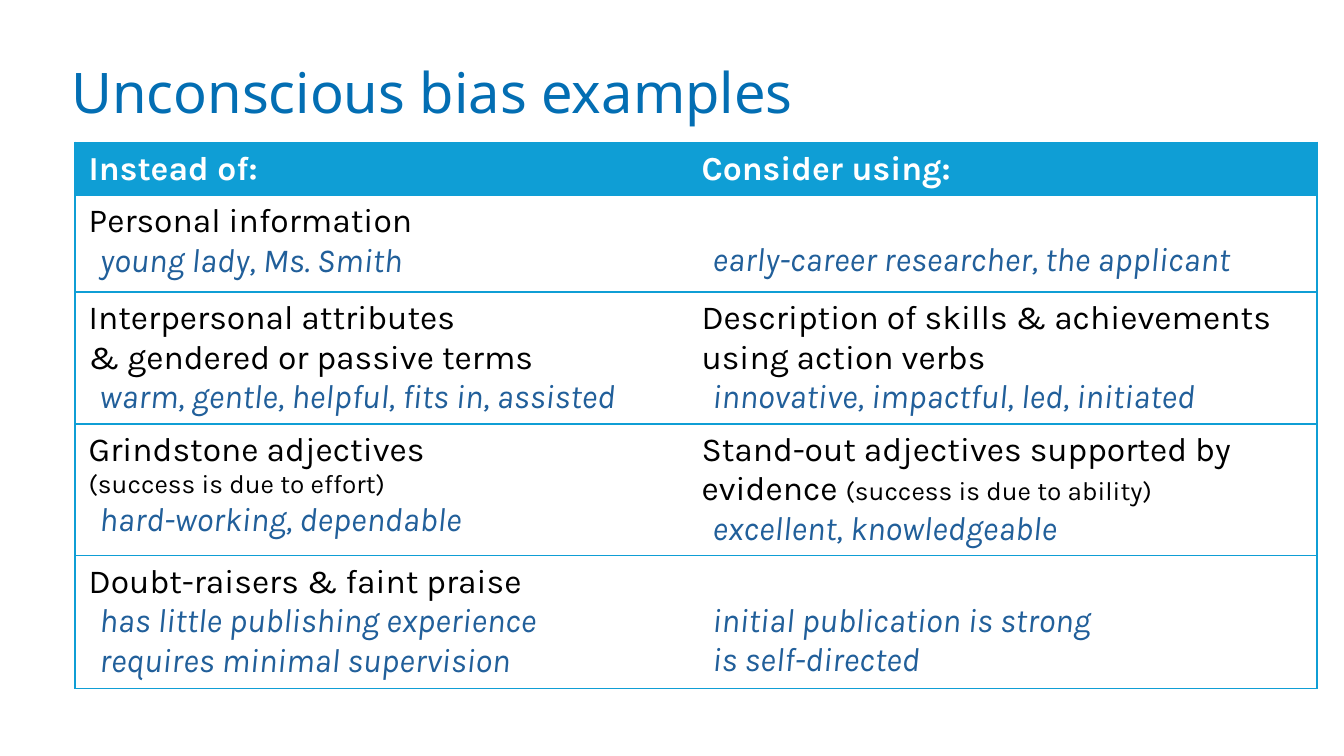
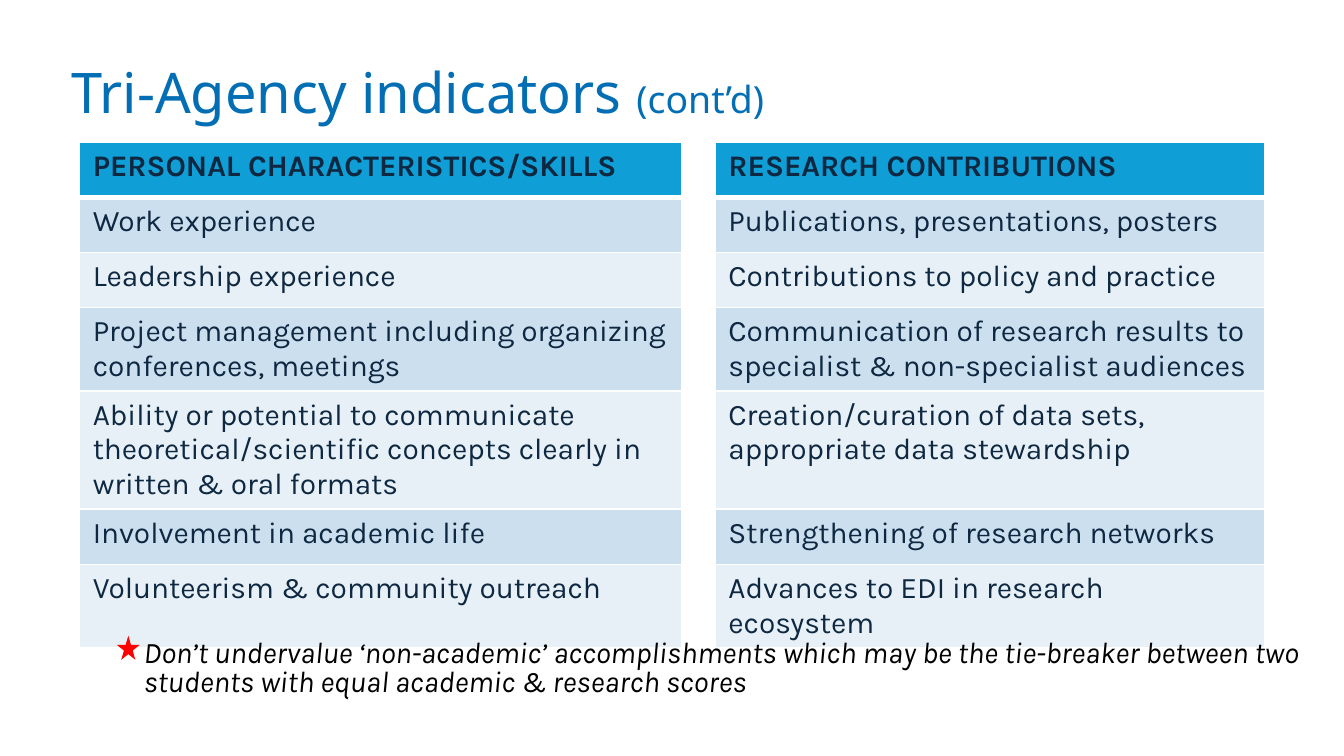
"""Build two slides on unconscious bias and award indicators."""
from dataclasses import dataclass
from typing import Any, Optional

from lxml import etree
from pptx import Presentation
from pptx.dml import color as clr
from pptx.enum import shapes, text
from pptx.oxml import ns
from pptx.util import Inches, Pt

COLORS = {
    "title": "036EB3", "band": "0F9ED5", "white": "FFFFFF", "black": "000000",
    "example": "215F9A", "navy": "0E2841", "odd": "CCDFEF", "even": "E7F0F7",
    "star": "FF0000",
}
TITLE = {"name": "Noto Sans", "size": Pt(30), "color": "title"}
TITLE_NOTE = TITLE | {"size": Pt(20)}
KARLA = {"name": "Karla", "size": Pt(18), "bold": False, "color": "black"}
HEAD = KARLA | {"bold": True, "color": "white"}
SMALL = KARLA | {"size": Pt(14)}
EXAMPLE = KARLA | {"italic": True, "color": "example"}
ITEM = KARLA | {"size": Pt(16), "color": "navy"}
ITEM_HEAD = ITEM | {"bold": True}
NOTE = KARLA | {"size": Pt(16), "italic": True}
SKIPPED_LINE = Inches(0.34)


@dataclass(frozen=True)
class Run:
    """A piece of text with its font values."""
    text: str
    fmt: dict[str, Any]


@dataclass(frozen=True)
class Para:
    """A line of runs with a left indent."""
    runs: tuple[Run, ...]
    indent: float = 0


@dataclass(frozen=True)
class Border:
    """A cell border; without a colour it is not drawn."""
    color: Optional[str] = None
    width: float = 1


@dataclass(frozen=True)
class Cell:
    """The content and look of a table cell."""
    paras: tuple[Para, ...]
    fill: Optional[str]
    borders: dict[str, Border]
    skip_line: bool = False


@dataclass(frozen=True)
class Table:
    """A table's place, column widths, row heights and cells."""
    left: float
    top: float
    cols: tuple[float, ...]
    rows: tuple[float, ...]
    cells: list[list[Cell]]


def rgb(key: str) -> clr.RGBColor:
    """Return a named colour."""
    return clr.RGBColor.from_string(COLORS[key])


def line(value: str, fmt: dict[str, Any] = KARLA) -> Para:
    """Return a paragraph of one run."""
    return Para((Run(value, fmt),))


def example(value: str) -> Para:
    """Return an indented example phrase."""
    return Para((Run(value, EXAMPLE),), 0.08)


def write(tf: Any, paras: tuple[Para, ...]) -> None:
    """Fill a text frame with paragraphs."""
    for i, para in enumerate(paras):
        p = tf.add_paragraph() if i else tf.paragraphs[0]
        p.alignment = text.PP_ALIGN.LEFT
        if para.indent:
            pPr = p._p.get_or_add_pPr()
            pPr.set("marL", str(Inches(para.indent)))
            pPr.set("indent", "0")
        for run in para.runs:
            r = p.add_run()
            r.text = run.text
            for key, value in run.fmt.items():
                if key == "color":
                    r.font.color.rgb = rgb(value)
                else:
                    setattr(r.font, key, value)


def draw_borders(cell: Any, borders: dict[str, Border]) -> None:
    """Set the four borders of a cell."""
    tcPr = cell._tc.get_or_add_tcPr()
    for i, side in enumerate("LRTB"):
        border = borders.get(side, Border())
        ln = etree.Element(ns.qn(f"a:ln{side}"), w=str(Pt(border.width)))
        if border.color:
            fill = etree.SubElement(ln, ns.qn("a:solidFill"))
            etree.SubElement(fill, ns.qn("a:srgbClr"), val=COLORS[border.color])
        else:
            etree.SubElement(ln, ns.qn("a:noFill"))
        tcPr.insert(i, ln)


def draw_table(s: Any, table: Table) -> None:
    """Add a table to a slide."""
    tbl = s.shapes.add_table(
        len(table.rows), len(table.cols), Inches(table.left), Inches(table.top),
        Inches(sum(table.cols)), Inches(sum(table.rows))).table
    tbl.first_row = tbl.horz_banding = False
    for col, width in zip(tbl.columns, table.cols):
        col.width = Inches(width)
    for i, height in enumerate(table.rows):
        tbl.rows[i].height = Inches(height)
        for j, item in enumerate(table.cells[i]):
            cell = tbl.cell(i, j)
            write(cell.text_frame, item.paras)
            if item.skip_line:
                cell.margin_top = SKIPPED_LINE
            if item.fill:
                cell.fill.solid()
                cell.fill.fore_color.rgb = rgb(item.fill)
            else:
                cell.fill.background()
            draw_borders(cell, item.borders)


def add_slide(prs: Any, *title: Run) -> Any:
    """Add a slide with a formatted title."""
    s = prs.slides.add_slide(prs.slide_layouts[5])
    sp = s.shapes.title
    box = {"left": 0.43, "top": 0.3, "width": 9.01, "height": 0.76}
    for key, value in box.items():
        setattr(sp, key, Inches(value))
    tf = sp.text_frame
    frame = {"word_wrap": True, "auto_size": text.MSO_AUTO_SIZE.NONE,
             "vertical_anchor": text.MSO_ANCHOR.MIDDLE}
    for key, value in frame.items():
        setattr(tf, key, value)
    write(tf, (Para(title),))
    return s


def bias_slide(prs: Any) -> None:
    """Build the slide of wordings to avoid and to prefer."""
    s = add_slide(prs, Run("Unconscious bias examples", TITLE))
    rows = [
        ((line("Instead of:", HEAD),), (line("Consider using:", HEAD),)),
        ((line("Personal information"), example("young lady, Ms. Smith")),
         (example("early-career researcher, the applicant"),)),
        ((line("Interpersonal attributes"), line("& gendered or passive terms"),
          example("warm, gentle, helpful, fits in, assisted")),
         (line("Description of skills & achievements"), line("using action verbs"),
          example("innovative, impactful, led, initiated"))),
        ((line("Grindstone adjectives"), line("(success is due to effort)", SMALL),
          example("hard-working, dependable")),
         (Para((Run("Stand-out adjectives supported by evidence ", KARLA),
                Run("(success is due to ability)", SMALL))),
          example("excellent, knowledgeable"))),
        ((line("Doubt-raisers & faint praise"),
          example("has little publishing experience"),
          example("requires minimal supervision")),
         (example("initial publication is strong"), example("is self-directed"))),
    ]
    edge = Border("band")
    cells = [[Cell(paras, None if i else "band",
                   {"T": edge, "B": edge, side: edge}, paras[0].indent > 0)
              for side, paras in zip("LR", row)] for i, row in enumerate(rows)]
    draw_table(s, Table(0.56, 1.06, (4.56, 4.68),
                        (0.37, 0.72, 0.86, 0.86, 0.99), cells))


def indicators_slide(prs: Any) -> None:
    """Build the slide of indicators with its starred note."""
    s = add_slide(prs, Run("Tri-Agency indicators ", TITLE),
                  Run("(cont’d)", TITLE_NOTE))
    rows = [
        ("PERSONAL CHARACTERISTICS/SKILLS", "RESEARCH CONTRIBUTIONS"),
        ("Work experience", "Publications, presentations, posters"),
        ("Leadership experience", "Contributions to policy and practice"),
        ("Project management including organizing conferences, meetings",
         "Communication of research results to specialist & non-specialist audiences"),
        ("Ability or potential to communicate theoretical/scientific concepts "
         "clearly in written & oral formats",
         "Creation/curation of data sets, appropriate data stewardship"),
        ("Involvement in academic life", "Strengthening of research networks"),
        ("Volunteerism & community outreach", "Advances to EDI in research ecosystem"),
    ]
    cells = []
    for i, (skill, contribution) in enumerate(rows):
        fmt = ITEM if i else ITEM_HEAD
        fill = ("even", "odd")[i % 2] if i else "band"
        borders = {side: Border("white") for side in "LRTB"}
        if i < 2:
            borders["T" if i else "B"] = Border("white", 3)
        cells.append([Cell((line(skill, fmt),), fill, borders),
                      Cell((), None, borders),
                      Cell((line(contribution, fmt),), fill, borders)])
    draw_table(s, Table(0.59, 1.06, (4.48, 0.25, 4.09), (0.41,) * len(rows), cells))

    tf = s.shapes.add_textbox(Inches(0.97), Inches(4.72),
                              Inches(8.82), Inches(0.54)).text_frame
    tf.word_wrap = True
    tf.auto_size = text.MSO_AUTO_SIZE.SHAPE_TO_FIT_TEXT
    write(tf, (line("Don’t undervalue ‘non-academic’ accomplishments which may be the "
                    "tie-breaker between two students with equal academic & "
                    "research scores", NOTE),))
    tf.paragraphs[0].line_spacing = 0.8

    star = s.shapes.add_shape(shapes.MSO_SHAPE.STAR_5_POINT, Inches(0.87),
                              Inches(4.73), Inches(0.17), Inches(0.18))
    star.shadow.inherit = False
    star.fill.solid()
    star.fill.fore_color.rgb = rgb("star")
    star.line.fill.background()


def main() -> None:
    """Build and save the presentation."""
    prs = Presentation()
    prs.slide_width = Inches(10)
    prs.slide_height = Inches(10 * 9 / 16)
    bias_slide(prs)
    indicators_slide(prs)
    prs.save("out.pptx")


if __name__ == "__main__":
    main()
